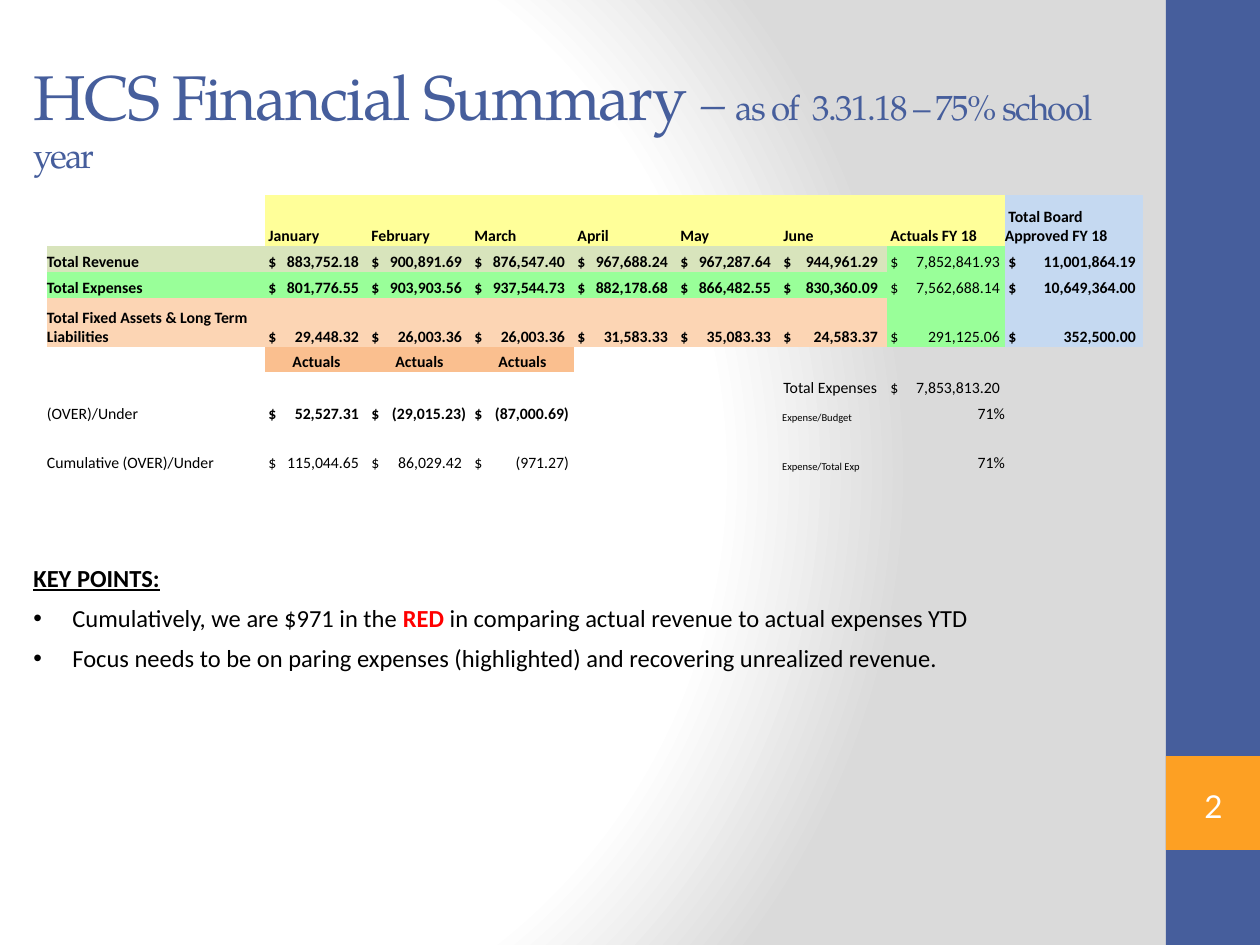
from lxml import etree
from pptx import Presentation
from pptx.dml.color import RGBColor
from pptx.enum.shapes import MSO_SHAPE
from pptx.enum.text import MSO_ANCHOR, MSO_AUTO_SIZE, PP_ALIGN
from pptx.oxml import parse_xml
from pptx.oxml.ns import nsdecls, qn
from pptx.util import Emu, Pt

RECTANGLE = MSO_SHAPE.RECTANGLE
BRACKETS = MSO_SHAPE.DOUBLE_BRACKET
MIDDLE, BOTTOM = MSO_ANCHOR.MIDDLE, MSO_ANCHOR.BOTTOM
LEFT, CENTER, RIGHT = PP_ALIGN.LEFT, PP_ALIGN.CENTER, PP_ALIGN.RIGHT
NO_AUTOFIT = MSO_AUTO_SIZE.NONE

PX_PER_INCH = 126
TITLE_FONT, BODY_FONT, NUMBER_FONT = "TeX Gyre Pagella", "Calibri", "Lato"
BLUE, ORANGE, WHITE, BLACK, RED = "465E9C", "FDA023", "FFFFFF", "000000", "FF0000"
YELLOW, OLIVE, GREEN, PEACH, APRICOT, SKY = (
    "FFFF99", "D8E4BC", "99FF99", "FCD5B4", "FABF8F", "C5D9F1")
NO_GRID_STYLE = "{2D5ABB26-0587-4C30-8999-92F81FD0307C}"

COLUMN_WIDTHS = [218] + [103] * 5 + [107, 118, 138]
ROW_HEIGHTS = [51, 26, 26, 49, 25, 26, 26, 49]
AMOUNT_EDGES = [0] + [94] * 5 + [98, 113, 131]
OVER_UNDER_ROW, ACTUALS_COLUMN = 6, 7
ROWS = [
    ["", " January", " February", " March", " April", " May", " June",
     " Actuals FY 18", " Total Board Approved FY 18"],
    ["Total Revenue", "$883,752.18", "$900,891.69", "$876,547.40", "$967,688.24",
     "$967,287.64", "$944,961.29", "$7,852,841.93", "$11,001,864.19"],
    ["Total Expenses", "$801,776.55", "$903,903.56", "$937,544.73", "$882,178.68",
     "$866,482.55", "$830,360.09", "$7,562,688.14", "$10,649,364.00"],
    ["Total Fixed Assets & Long Term Liabilities", "$29,448.32", "$26,003.36",
     "$26,003.36", "$31,583.33", "$35,083.33", "$24,583.37", "$291,125.06",
     "$352,500.00"],
    [""] + [" Actuals "] * 3 + [""] * 5,
    [""] * 6 + [" Total Expenses", "$7,853,813.20", ""],
    ["(OVER)/Under", "$52,527.31", "$(29,015.23)", "$(87,000.69)", "", "",
     " Expense/Budget", "71%", ""],
    ["Cumulative (OVER)/Under", "$115,044.65", "$86,029.42", "$(971.27)", "", "",
     " Expense/Total Exp", "71%", ""],
]
FILLS = [
    [None] + [YELLOW] * 7 + [SKY],
    [OLIVE] * 7 + [GREEN, SKY],
    [GREEN] * 8 + [SKY],
    [PEACH] * 7 + [GREEN, SKY],
    [None] + [APRICOT] * 3 + [None] * 5,
] + [[None] * 9] * 3


def px(length):
    """Turn px into EMU."""
    return Emu(round(length * 914400 / PX_PER_INCH))


def color(value):
    """Turn a hex string into a colour."""
    return RGBColor.from_string(value)


def place(shape, box):
    """Move and size a shape to a px box."""
    shape.left, shape.top, shape.width, shape.height = map(px, box)


def format_run(run, font, size, fill, bold=False):
    """Set the font, size, colour and weight of a run."""
    run.font.name, run.font.size, run.font.bold = font, Pt(size), bold
    run.font.color.rgb = color(fill)


def set_margins(target):
    """Remove the inner margins of a cell or text frame."""
    target.margin_left = target.margin_right = 0
    target.margin_top = target.margin_bottom = 0


def add_background(slide):
    """Give the slide a circular white to grey gradient."""
    stops = "".join(
        f'<a:gs pos="{position}000"><a:srgbClr val="{value}"/></a:gs>'
        for position, value in ((0, WHITE), (75, WHITE), (100, "DADADA")))
    background = parse_xml(
        f'<p:bg {nsdecls("p", "a")}><p:bgPr><a:gradFill rotWithShape="1">'
        f'<a:gsLst>{stops}</a:gsLst><a:path path="circle">'
        '<a:fillToRect l="20000" t="50000" r="100000" b="50000"/></a:path>'
        '</a:gradFill><a:effectLst/></p:bgPr></p:bg>')
    slide.element.cSld.insert(0, background)


def add_block(slide, box, fill):
    """Add a plain filled rectangle."""
    block = slide.shapes.add_shape(RECTANGLE, *map(px, box))
    block.shadow.inherit = False
    block.fill.solid()
    block.fill.fore_color.rgb = color(fill)
    block.line.fill.background()


def add_sidebar(slide, box, number):
    """Add the side band with its slide number."""
    left, top, width, height = box
    add_block(slide, box, BLUE)
    add_block(slide, (left, top + 756, width, width), ORANGE)
    label = slide.shapes.add_shape(
        BRACKETS, *map(px, (left + 10, top + 779, width - 19, 54)))
    label.shadow.inherit = False
    label.fill.background()
    label.line.fill.background()
    frame = label.text_frame
    set_margins(frame)
    frame.vertical_anchor = MIDDLE
    frame.text = number
    frame.paragraphs[0].alignment = CENTER
    format_run(frame.paragraphs[0].runs[0], NUMBER_FONT, 18, WHITE)


def fill_title(slide, box):
    """Place the title and write its three sizes of text."""
    title = slide.shapes.title
    place(title, box)
    frame = title.text_frame
    frame.auto_size, frame.word_wrap = NO_AUTOFIT, True
    frame.vertical_anchor = MIDDLE
    paragraph = frame.paragraphs[0]
    paragraph.alignment = LEFT
    for text, size, italic in (("HCS Financial Summary ", 36, False),
                               ("– ", 27, True),
                               ("as of  3.31.18 – 75% school year", 20, False)):
        run = paragraph.add_run()
        run.text = text
        format_run(run, TITLE_FONT, size, BLUE)
        run.font.italic = italic
        run.font._element.set("spc", "-100")


def add_right_tab(paragraph, position):
    """Add a right tab stop to a paragraph."""
    tabs = etree.SubElement(paragraph._p.get_or_add_pPr(), qn("a:tabLst"))
    etree.SubElement(tabs, qn("a:tab"), pos=str(px(position)), algn="r")


def fill_cell(cell, row, column):
    """Write and format one cell of the summary."""
    text, fill = ROWS[row][column], FILLS[row][column]
    set_margins(cell)
    cell.vertical_anchor = BOTTOM
    if fill:
        cell.fill.solid()
        cell.fill.fore_color.rgb = color(fill)
    else:
        cell.fill.background()
    paragraph = cell.text_frame.paragraphs[0]
    if not text:
        paragraph._p.get_or_add_endParaRPr().set("sz", "900")
        return
    is_amount = text.startswith("$")
    paragraph.text = text.replace("$", " $\t")
    if is_amount:
        add_right_tab(paragraph, AMOUNT_EDGES[column] + 4 * text.endswith(")"))
    elif text.endswith("%"):
        paragraph.alignment = RIGHT
    elif fill == APRICOT:
        paragraph.alignment = CENTER
    if fill:
        bold = not (is_amount and column == ACTUALS_COLUMN)
    else:
        bold = is_amount and row == OVER_UNDER_ROW
    size = 6 if text.startswith(" Expense/") else 9
    format_run(paragraph.runs[0], BODY_FONT, size, BLACK, bold)


def add_summary_table(slide, left, top):
    """Add the table of monthly figures."""
    table = slide.shapes.add_table(
        len(ROWS), len(COLUMN_WIDTHS), px(left), px(top),
        px(sum(COLUMN_WIDTHS)), px(sum(ROW_HEIGHTS))).table
    table.first_row = table.horz_banding = False
    table._tbl.tblPr.find(qn("a:tableStyleId")).text = NO_GRID_STYLE
    for column, width in zip(table.columns, COLUMN_WIDTHS):
        column.width = px(width)
    for row_index, height in enumerate(ROW_HEIGHTS):
        table.rows[row_index].height = px(height)
        for column_index in range(len(COLUMN_WIDTHS)):
            fill_cell(table.cell(row_index, column_index), row_index, column_index)


def add_key_points(slide, box):
    """Add the heading and the bulleted key points."""
    frame = slide.shapes.add_textbox(*map(px, box)).text_frame
    frame.word_wrap = True
    points = [
        [("KEY POINTS:", BLACK, True)],
        [("Cumulatively, we are $971 in the ", BLACK, False), ("RED", RED, True),
         (" in comparing actual revenue to actual expenses YTD", BLACK, False)],
        [("Focus needs to be on paring expenses (highlighted) and recovering "
          "unrealized revenue.", BLACK, False)],
    ]
    for index, parts in enumerate(points):
        paragraph = frame.add_paragraph() if index else frame.paragraphs[0]
        paragraph.space_before = Pt(6)
        for text, fill, bold in parts:
            run = paragraph.add_run()
            run.text = text
            format_run(run, BODY_FONT, 14, fill, bold)
            run.font.underline = index == 0
        if index:
            properties = paragraph._p.get_or_add_pPr()
            properties.set("marL", str(px(39)))
            properties.set("indent", str(px(-39)))
            etree.SubElement(properties, qn("a:buFont"), typeface="Arial")
            etree.SubElement(properties, qn("a:buChar"), char="•")


def main():
    """Build and save the financial summary slide."""
    presentation = Presentation()
    presentation.slide_width, presentation.slide_height = px(1260), px(945)
    slide = presentation.slides.add_slide(presentation.slide_layouts[5])
    add_background(slide)
    add_sidebar(slide, (1166, 0, 94, 945), "2")
    fill_title(slide, (21, 38, 1144, 157))
    add_key_points(slide, (21, 557, 1102, 164))
    add_summary_table(slide, 47, 195)
    presentation.save("out.pptx")


if __name__ == "__main__":
    main()
